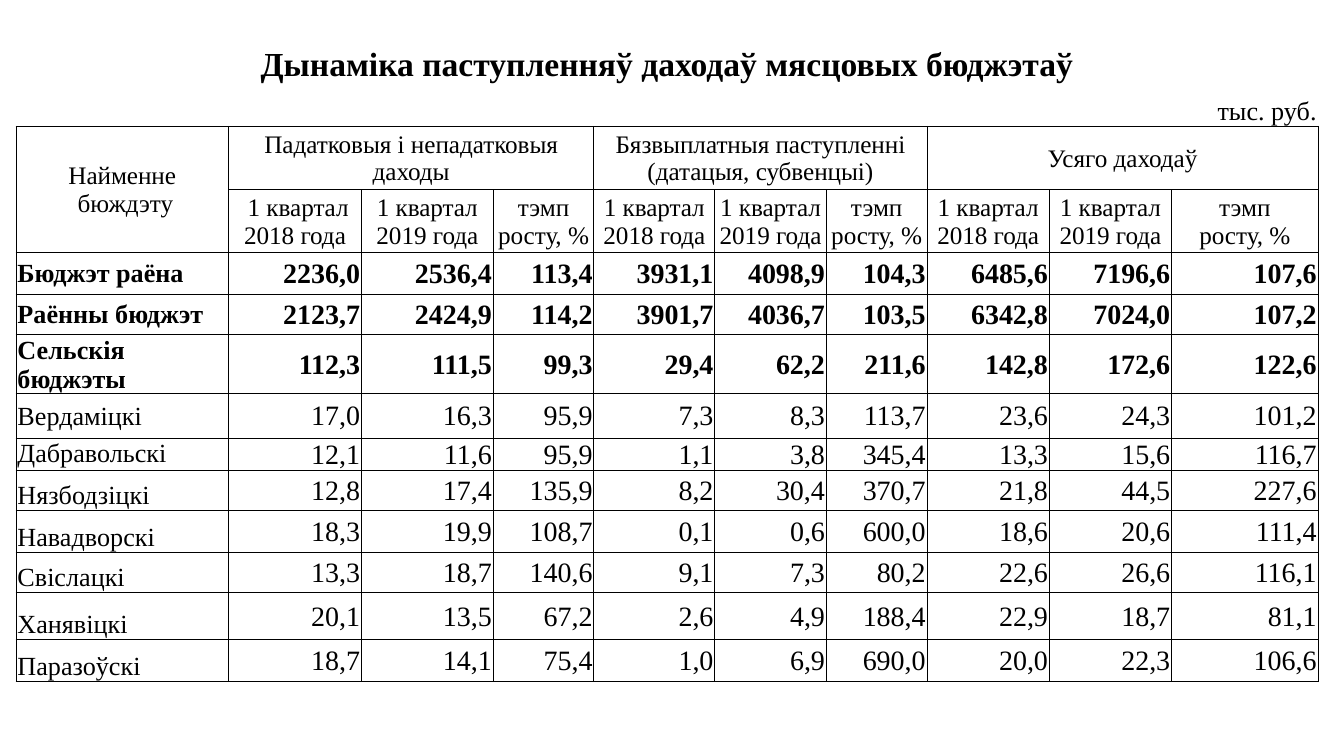
from dataclasses import dataclass

from lxml import etree
from pptx import Presentation
from pptx.dml.color import RGBColor
from pptx.enum import text
from pptx.oxml import ns
from pptx.util import Inches, Pt


@dataclass(frozen=True)
class Theme:
    font: str = "Times New Roman"
    ink: str = "000000"
    title: float = 18
    header: float = 13.5
    label: float = 14
    value: float = 15
    border: float = 0.5


THEME = Theme()
LEFT, CENTER, RIGHT = (text.PP_ALIGN.LEFT, text.PP_ALIGN.CENTER,
                       text.PP_ALIGN.RIGHT)
TOP, MIDDLE, BOTTOM = (text.MSO_ANCHOR.TOP, text.MSO_ANCHOR.MIDDLE,
                       text.MSO_ANCHOR.BOTTOM)

COL_WIDTHS = [1.58, 0.99, 0.84, 0.14, 0.75, 0.9, 0.21,
              0.62, 0.75, 0.91, 0.29, 0.62, 0.23, 0.86]
HEAD_HEIGHTS = [0.33, 0.32, 0.47, 0.47]

# First grid column and column span of each of the nine value columns
VALUE_COLS = [(1, 1), (2, 2), (4, 1), (5, 1), (6, 2), (8, 1),
              (9, 1), (10, 2), (12, 2)]
UNIT_ROW_SPANS = [(1, 2), (3, 4), (7, 2), (9, 2), (11, 2)]
GROUPS = [(1, 4, "Падатковыя і непадатковыя даходы"),
          (5, 4, "Бязвыплатныя паступленні (датацыя, субвенцыі)"),
          (9, 5, "Усяго даходаў")]
SUBHEADS = ["1 квартал 2018 года", "1 квартал 2019 года", "тэмп\nросту, %"]

# Name, row height, bold, name anchor, value anchor, values
BUDGETS = [
    ("Бюджэт раёна", 0.31, True, MIDDLE, MIDDLE,
     "2236,0 2536,4 113,4 3931,1 4098,9 104,3 6485,6 7196,6 107,6"),
    ("Раённы бюджэт", 0.3, True, MIDDLE, MIDDLE,
     "2123,7 2424,9 114,2 3901,7 4036,7 103,5 6342,8 7024,0 107,2"),
    ("Сельскія бюджэты", 0.44, True, MIDDLE, MIDDLE,
     "112,3 111,5 99,3 29,4 62,2 211,6 142,8 172,6 122,6"),
    ("Вердаміцкі", 0.33, False, MIDDLE, MIDDLE,
     "17,0 16,3 95,9 7,3 8,3 113,7 23,6 24,3 101,2"),
    ("Дабравольскі", 0.24, False, TOP, TOP,
     "12,1 11,6 95,9 1,1 3,8 345,4 13,3 15,6 116,7"),
    ("Нязбодзіцкі", 0.3, False, BOTTOM, MIDDLE,
     "12,8 17,4 135,9 8,2 30,4 370,7 21,8 44,5 227,6"),
    ("Навадворскі", 0.31, False, BOTTOM, MIDDLE,
     "18,3 19,9 108,7 0,1 0,6 600,0 18,6 20,6 111,4"),
    ("Свіслацкі", 0.3, False, BOTTOM, MIDDLE,
     "13,3 18,7 140,6 9,1 7,3 80,2 22,6 26,6 116,1"),
    ("Ханявіцкі", 0.35, False, BOTTOM, MIDDLE,
     "20,1 13,5 67,2 2,6 4,9 188,4 22,9 18,7 81,1"),
    ("Паразоўскі", 0.31, False, BOTTOM, MIDDLE,
     "18,7 14,1 75,4 1,0 6,9 690,0 20,0 22,3 106,6"),
]


def set_borders(cell, sides):
    """Draw the given sides of a cell and clear the others."""
    tc_pr = cell._tc.get_or_add_tcPr()
    for side in "LRTB":
        ln = etree.SubElement(tc_pr, ns.qn(f"a:ln{side}"),
                              w=str(Pt(THEME.border)))
        if side in sides:
            fill = etree.SubElement(ln, ns.qn("a:solidFill"))
            etree.SubElement(fill, ns.qn("a:srgbClr"), val=THEME.ink)
        else:
            etree.SubElement(ln, ns.qn("a:noFill"))


def style_cells(table):
    for i, row in enumerate(table.rows):
        sides = "" if i == 0 else "B" if i == 1 else "LRTB"
        for cell in row.cells:
            set_borders(cell, sides)
            cell.fill.background()
            cell.margin_left = cell.margin_right = Inches(0.01)
            cell.margin_top, cell.margin_bottom = Inches(0.01), 0


def put(table, row, col, words, size, align, anchor=MIDDLE, bold=False,
        rows=1, cols=1):
    """Fill one cell, merged over the given rows and columns."""
    cell = table.cell(row, col)
    if rows > 1 or cols > 1:
        cell.merge(table.cell(row + rows - 1, col + cols - 1))
    cell.vertical_anchor = anchor
    cell.text_frame.text = words
    for p in cell.text_frame.paragraphs:
        p.alignment = align
        for r in p.runs:
            r.font.name, r.font.size, r.font.bold = THEME.font, Pt(size), bold
            r.font.color.rgb = RGBColor.from_string(THEME.ink)


def fill_heading(table):
    # Title and unit
    put(table, 0, 0, "Дынаміка паступленняў даходаў мясцовых бюджэтаў",
        THEME.title, CENTER, BOTTOM, True, cols=len(COL_WIDTHS))
    for col, span in UNIT_ROW_SPANS:
        table.cell(1, col).merge(table.cell(1, col + span - 1))
    put(table, 1, 13, "тыс. руб.", THEME.label, RIGHT, BOTTOM)

    # Column heads
    put(table, 2, 0, "Найменне\n бюждэту", THEME.header, CENTER, rows=2)
    for col, span, words in GROUPS:
        put(table, 2, col, words, THEME.header, CENTER, cols=span)
    for i, (col, span) in enumerate(VALUE_COLS):
        words = SUBHEADS[i % 3]
        put(table, 3, col, " " + words if i == 0 else words,
            THEME.header, CENTER, cols=span)


def fill_budgets(table):
    for row, budget in enumerate(BUDGETS, len(HEAD_HEIGHTS)):
        name, _, bold, name_anchor, value_anchor, values = budget
        put(table, row, 0, name, THEME.label, LEFT, name_anchor, bold)
        for (col, span), value in zip(VALUE_COLS, values.split()):
            put(table, row, col, value, THEME.value, RIGHT, value_anchor,
                bold, cols=span)


def add_budget_table(s, left, top, width):
    heights = HEAD_HEIGHTS + [budget[1] for budget in BUDGETS]
    table = s.shapes.add_table(
        len(heights), len(COL_WIDTHS), Inches(left), Inches(top),
        Inches(width), Inches(sum(heights))).table
    table.first_row = table.horz_banding = False
    scale = width / sum(COL_WIDTHS)
    for column, w in zip(table.columns, COL_WIDTHS):
        column.width = Inches(w * scale)
    for row, h in zip(table.rows, heights):
        row.height = Inches(h)
    style_cells(table)
    fill_heading(table)
    fill_budgets(table)


def main():
    prs = Presentation()
    # Widescreen, 16 to 9
    prs.slide_width = Inches(10)
    prs.slide_height = prs.slide_width * 9 // 16
    s = prs.slides.add_slide(prs.slide_layouts[6])
    add_budget_table(s, 0.12, 0.29, 9.69)
    prs.save("out.pptx")


if __name__ == "__main__":
    main()
